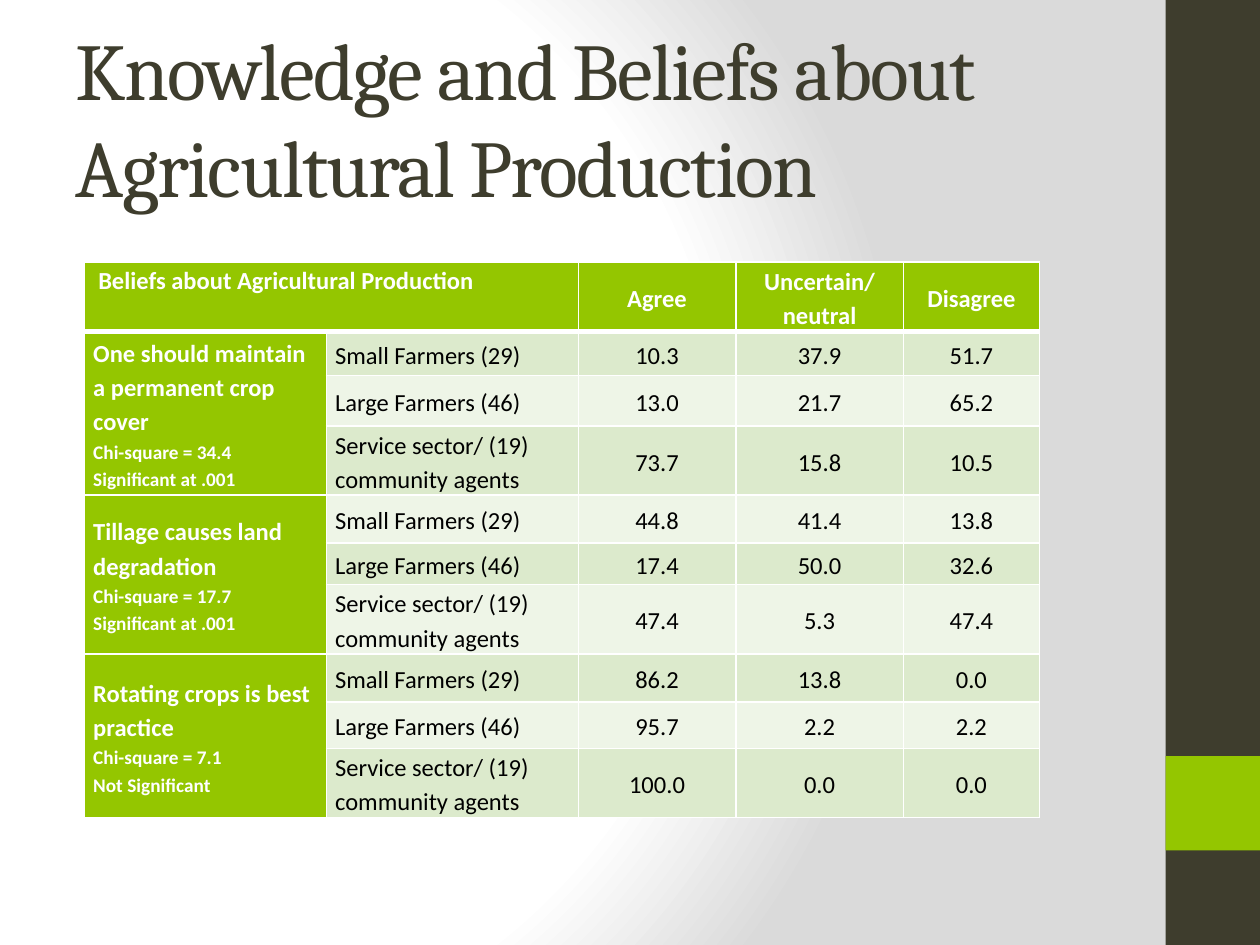
from lxml import etree
from pptx import Presentation
from pptx import util as u
from pptx.dml.color import RGBColor
from pptx.enum import shapes, text
from pptx.oxml import parse_xml
from pptx.oxml.ns import qn

DARK, GREEN, WHITE, BLACK = "3E3D2D", "94C600", "FFFFFF", "000000"
BANDS = ["DCEACC", "EEF5E7"]
COLS = [1.92, 2, 1.25, 1.33, 1.08]
ROWS = [0.55, 0.35, 0.4, 0.55, 0.38, 0.33, 0.55, 0.38, 0.37, 0.55]
HEADS = ["Agree", "Uncertain/ neutral", "Disagree"]
GROUPS = ["Small Farmers (29)", "Large Farmers (46)",
          "Service sector/ (19) community agents"]
BELIEFS = [
    (["One should maintain a permanent crop cover",
      "Chi-square = 34.4", "Significant at .001"],
     [("10.3", "37.9", "51.7"), ("13.0", "21.7", "65.2"),
      ("73.7", "15.8", "10.5")]),
    (["Tillage causes land degradation",
      "Chi-square = 17.7", "Significant at .001"],
     [("44.8", "41.4", "13.8"), ("17.4", "50.0", "32.6"),
      ("47.4", "5.3", "47.4")]),
    (["Rotating crops is best practice",
      "Chi-square = 7.1", "Not Significant"],
     [("86.2", "13.8", "0.0"), ("95.7", "2.2", "2.2"),
      ("100.0", "0.0", "0.0")]),
]
LEFT, MID = text.PP_ALIGN.LEFT, text.PP_ALIGN.CENTER
BACK = """<p:bg
 xmlns:p="http://schemas.openxmlformats.org/presentationml/2006/main"
 xmlns:a="http://schemas.openxmlformats.org/drawingml/2006/main">
 <p:bgPr><a:gradFill rotWithShape="1"><a:gsLst>
 <a:gs pos="0"><a:srgbClr val="FFFFFF"/></a:gs>
 <a:gs pos="75000"><a:srgbClr val="FFFFFF"/></a:gs>
 <a:gs pos="100000"><a:srgbClr val="DADADA"/></a:gs></a:gsLst>
 <a:path path="circle">
 <a:fillToRect l="20000" t="50000" r="100000" b="50000"/></a:path>
 </a:gradFill><a:effectLst/></p:bgPr></p:bg>"""


def paint(fill, color):
    fill.solid()
    fill.fore_color.rgb = RGBColor.from_string(color)


def add_run(para, words, size, color, font="Calibri", bold=False):
    run = para.add_run()
    run.text = words
    run.font.size = u.Pt(size)
    run.font.name = font
    run.font.bold = bold
    run.font.color.rgb = RGBColor.from_string(color)
    return run


def add_bar(slide, top, height, color):
    bar = slide.shapes.add_shape(
        shapes.MSO_SHAPE.RECTANGLE, u.Inches(9.25), u.Inches(top),
        u.Inches(0.75), u.Inches(height))
    bar.shadow.inherit = False
    paint(bar.fill, color)
    bar.line.fill.background()


def set_title(slide, words):
    title = slide.shapes.title
    title.left, title.top = u.Inches(0.5), u.Inches(0.3)
    title.width, title.height = u.Inches(8.33), u.Inches(1.25)
    frame = title.text_frame
    frame.word_wrap = True
    frame.auto_size = text.MSO_AUTO_SIZE.NONE
    frame.vertical_anchor = text.MSO_ANCHOR.MIDDLE
    para = frame.paragraphs[0]
    para.alignment = LEFT
    run = add_run(para, words, 46, DARK, "Cambria")
    run.font._element.set("spc", "-100")


def set_edges(cell, top, bottom):
    props = cell._tc.get_or_add_tcPr()
    for side, width in zip("LRTB", (1, 1, top, bottom)):
        line = etree.SubElement(props, qn("a:ln" + side), w=str(u.Pt(width)))
        fill = etree.SubElement(line, qn("a:solidFill"))
        etree.SubElement(fill, qn("a:srgbClr"), val=WHITE)


def fill_cell(cell, lines, fill, align=LEFT, color=BLACK, bold=False):
    """Write the first line at 14 points and the rest at 11."""
    paint(cell.fill, fill)
    frame = cell.text_frame
    for i, words in enumerate(lines):
        para = frame.add_paragraph() if i else frame.paragraphs[0]
        para.alignment = align
        para.line_spacing = 1.15
        add_run(para, words, 11 if i else 14, color, bold=bold)


def add_grid(slide):
    frame = slide.shapes.add_table(
        len(ROWS), len(COLS), u.Inches(0.67), u.Inches(2.08),
        u.Inches(sum(COLS)), u.Inches(sum(ROWS)))
    table = frame.table
    table.first_row = table.horz_banding = False
    for col, width in zip(table.columns, COLS):
        col.width = u.Inches(width)
    for i, (row, height) in enumerate(zip(table.rows, ROWS)):
        row.height = u.Inches(height)
        for cell in row.cells:
            cell.margin_left = cell.margin_right = u.Inches(0.07)
            cell.margin_top = cell.margin_bottom = 0
            cell.vertical_anchor = text.MSO_ANCHOR.MIDDLE
            set_edges(cell, 3 if i == 1 else 1, 3 if i == 0 else 1)

    # Header row
    head = table.cell(0, 0)
    head.merge(table.cell(0, 1))
    fill_cell(head, ["Beliefs about Agricultural Production"], GREEN,
              color=WHITE, bold=True)
    head.vertical_anchor = text.MSO_ANCHOR.TOP
    head.margin_left = u.Inches(0.11)
    for c, words in enumerate(HEADS, 2):
        fill_cell(table.cell(0, c), [words], GREEN, MID, WHITE, True)

    # Three rows for each belief
    for b, (lines, scores) in enumerate(BELIEFS):
        first = 1 + b * len(GROUPS)
        belief = table.cell(first, 0)
        belief.merge(table.cell(first + len(GROUPS) - 1, 0))
        fill_cell(belief, lines, GREEN, color=WHITE, bold=True)
        for r, (group, values) in enumerate(zip(GROUPS, scores), first):
            band = BANDS[(r - 1) % 2]
            fill_cell(table.cell(r, 1), [group], band)
            for c, value in enumerate(values, 2):
                fill_cell(table.cell(r, c), [value], band, MID)


def main():
    deck = Presentation()
    deck.slide_width, deck.slide_height = u.Inches(10), u.Inches(7.5)
    slide = deck.slides.add_slide(deck.slide_layouts[5])
    slide._element.cSld.insert(0, parse_xml(BACK))

    # Side band with its accent
    add_bar(slide, 0, 7.5, DARK)
    add_bar(slide, 6, 0.75, GREEN)

    set_title(slide, "Knowledge and Beliefs about Agricultural Production")
    add_grid(slide)
    deck.save("out.pptx")


if __name__ == "__main__":
    main()
